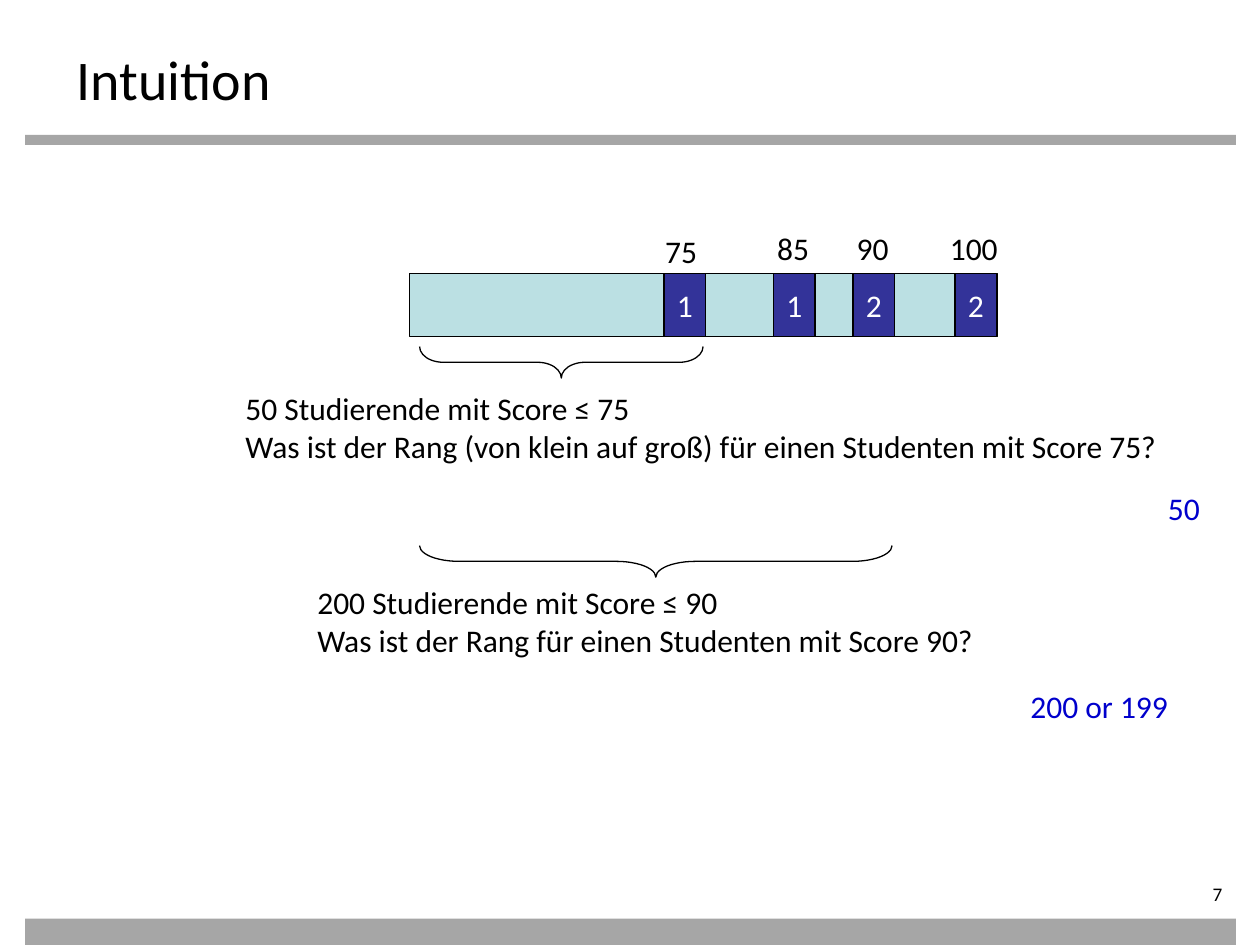
from pptx import Presentation
from pptx.dml.color import RGBColor
from pptx.enum.shapes import MSO_SHAPE
from pptx.enum.text import MSO_ANCHOR, PP_ALIGN
from pptx.util import Inches, Pt

RECTANGLE, LEFT_BRACE = MSO_SHAPE.RECTANGLE, MSO_SHAPE.LEFT_BRACE
TOP, MIDDLE = MSO_ANCHOR.TOP, MSO_ANCHOR.MIDDLE
LEFT, CENTER, RIGHT = PP_ALIGN.LEFT, PP_ALIGN.CENTER, PP_ALIGN.RIGHT

COLORS = {
    "text": "000000",
    "rule": "A6A6A6",
    "range": "BBE0E3",
    "score": "333399",
    "count": "FFFFFF",
    "answer": "0000CC",
}
FONT = "Calibri"
BAR_LEFT, BAR_TOP, BAR_WIDTH, BAR_HEIGHT = 3.25, 2.17, 4.67, 0.5
SCORE_WIDTH = 0.33
BRACE_LEFT, BRACE_DEPTH = 3.33, 0.25


def color(name):
    return RGBColor.from_string(COLORS[name])


def write(frame, lines, size=18, ink="text", align=LEFT, anchor=TOP, wrap=False):
    frame.word_wrap = wrap
    frame.vertical_anchor = anchor
    frame.text = "\n".join(lines)
    for paragraph in frame.paragraphs:
        paragraph.alignment = align
        paragraph.font.name = FONT
        paragraph.font.size = Pt(size)
        paragraph.font.color.rgb = color(ink)


def add_text(slide, left, top, width, height, lines, **style):
    box = slide.shapes.add_textbox(
        Inches(left), Inches(top), Inches(width), Inches(height))
    write(box.text_frame, lines, **style)
    return box.text_frame


def add_box(slide, left, top, width, height, fill, outlined=True):
    box = slide.shapes.add_shape(
        RECTANGLE, Inches(left), Inches(top), Inches(width), Inches(height))
    box.shadow.inherit = False
    box.fill.solid()
    box.fill.fore_color.rgb = color(fill)
    if outlined:
        outline(box)
    else:
        box.line.fill.background()
    return box


def outline(shape):
    shape.line.color.rgb = color("text")
    shape.line.width = Pt(0.75)


def add_brace_below(slide, top, length, curve):
    """Lay a left brace on its side so that it opens upwards."""
    left = BRACE_LEFT + (length - BRACE_DEPTH) / 2
    upright_top = top - (length - BRACE_DEPTH) / 2
    brace = slide.shapes.add_shape(
        LEFT_BRACE, Inches(left), Inches(upright_top),
        Inches(BRACE_DEPTH), Inches(length))
    brace.rotation = 270
    brace.adjustments[0] = curve
    brace.shadow.inherit = False
    brace.fill.background()
    outline(brace)


def add_score(slide, left, count, score, label_left, label_top, label_width):
    cell = add_box(slide, left, BAR_TOP, SCORE_WIDTH, BAR_HEIGHT, "score")
    write(cell.text_frame, [count], ink="count", align=CENTER, anchor=MIDDLE)
    add_text(slide, label_left, label_top, label_width, 0.4, [score])


def main():
    prs = Presentation()
    prs.slide_width, prs.slide_height = Inches(10), Inches(7.5)
    slide = prs.slides.add_slide(prs.slide_layouts[6])

    # Frame and title
    for top, height in ((1.07, 0.08), (7.29, 0.21)):
        add_box(slide, 0.2, top, 9.61, height, "rule", outlined=False)
    title = add_text(slide, 0.51, 0.28, 9, 0.55, ["Intuition"], size=32, wrap=True)
    title.margin_top = Inches(0.07)

    # Sorted scores with the number of students at each
    add_box(slide, BAR_LEFT, BAR_TOP, BAR_WIDTH, BAR_HEIGHT, "range")
    for score in (
        (5.27, "1", "75", 5.18, 1.79, 0.48),
        (6.14, "1", "85", 6.07, 1.77, 0.48),
        (6.77, "2", "90", 6.7, 1.77, 0.48),
        (7.58, "2", "100", 7.44, 1.77, 0.62),
    ):
        add_score(slide, *score)

    # Rank of a student with score 75
    add_brace_below(slide, top=2.75, length=2.25, curve=0.75)
    add_text(slide, 1.85, 3.04, 7.63, 0.71, [
        "50 Studierende mit Score ≤ 75",
        "Was ist der Rang (von klein auf groß) für einen Studenten mit Score 75?",
    ])
    add_text(slide, 9.17, 3.83, 0.48, 0.4, ["50"], ink="answer")

    # Rank of a student with score 90
    add_brace_below(slide, top=4.33, length=3.75, curve=1.25)
    add_text(slide, 2.42, 4.58, 5.61, 0.71, [
        "200 Studierende mit Score ≤ 90",
        "Was ist der Rang für einen Studenten mit Score 90?",
    ])
    add_text(slide, 8.08, 5.4, 1.4, 0.4, ["200 or 199"], ink="answer")

    # Page number
    page = add_text(slide, 8.7, 7, 1.1, 0.22, ["7"], size=11, align=RIGHT, wrap=True)
    page.margin_left = page.margin_top = page.margin_bottom = 0

    prs.save("out.pptx")


if __name__ == "__main__":
    main()
